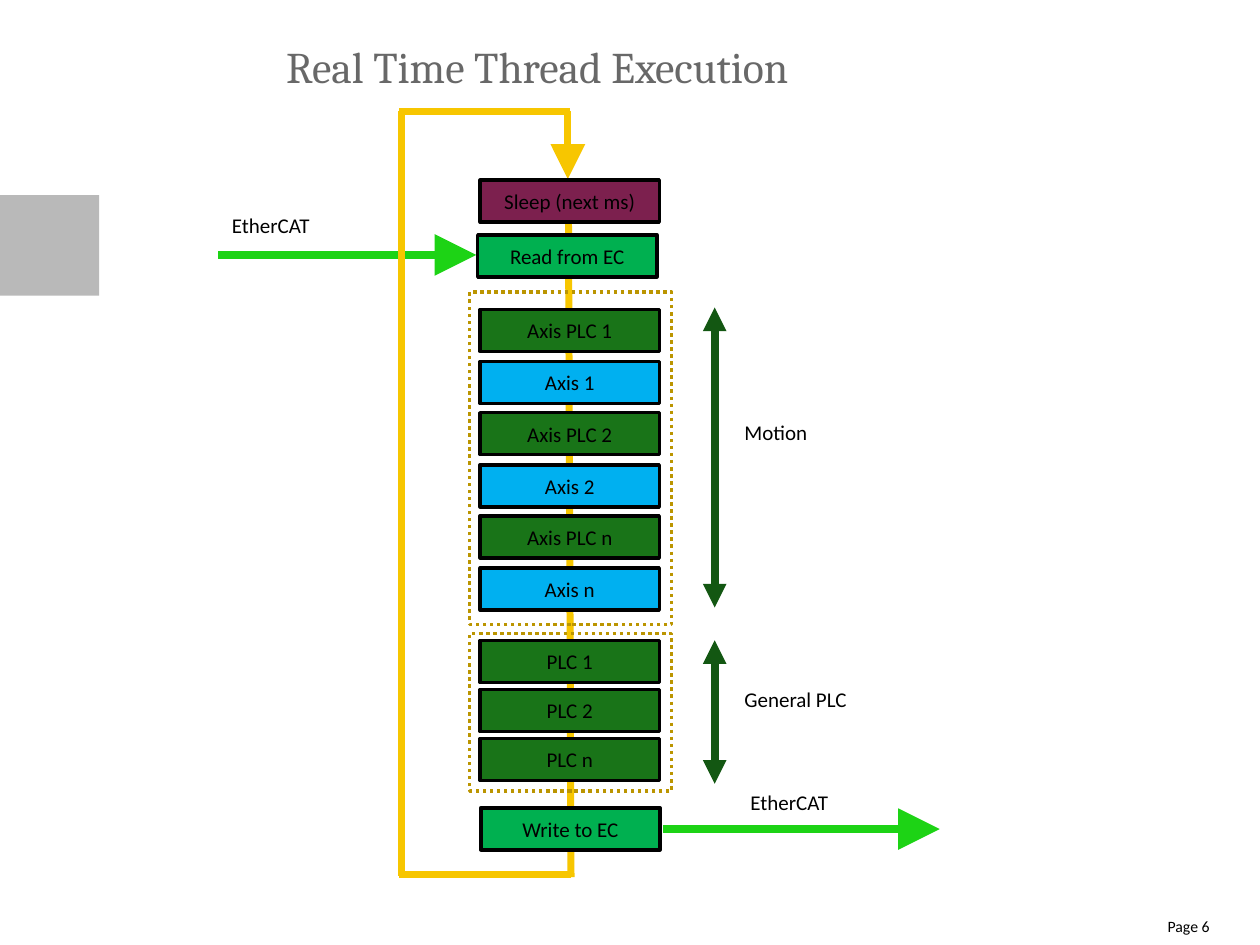
import pptx
import pptx.util
import pptx.dml.color
import pptx.enum.dml
import pptx.enum.shapes
import pptx.enum.text
import lxml.etree
from pptx.oxml.ns import qn

Pt = pptx.util.Pt
ANCHOR = pptx.enum.text.MSO_ANCHOR
ALIGN = pptx.enum.text.PP_ALIGN
RECTANGLE = pptx.enum.shapes.MSO_SHAPE.RECTANGLE
STRAIGHT = pptx.enum.shapes.MSO_CONNECTOR.STRAIGHT


def color(hex_value):
    return pptx.dml.color.RGBColor.from_string(hex_value)


def write(shape, text, size=12, font="Calibri", hex_value="000000",
          align=ALIGN.LEFT, anchor=ANCHOR.TOP, inset=(0, 0), wrap=True):
    frame = shape.text_frame
    frame.text = text
    frame.word_wrap = wrap
    frame.vertical_anchor = anchor
    frame.margin_left = frame.margin_right = Pt(inset[0])
    frame.margin_top = frame.margin_bottom = Pt(inset[1])
    paragraph = frame.paragraphs[0]
    paragraph.alignment = align
    run = paragraph.runs[0]
    run.font.size = Pt(size)
    run.font.name = font
    run.font.color.rgb = color(hex_value)


presentation = pptx.Presentation()
presentation.slide_width = Pt(720)
presentation.slide_height = Pt(540)
slide = presentation.slides.add_slide(presentation.slide_layouts[6])
shapes = slide.shapes

# Side block
block = shapes.add_shape(RECTANGLE, Pt(0), Pt(111.5), Pt(56.7), Pt(57.5))
block.shadow.inherit = False
block.fill.solid()
block.fill.fore_color.rgb = color("B9B9B9")
block.line.fill.background()

# Title and page number
title = shapes.add_textbox(Pt(163.5), Pt(23), Pt(528.5), Pt(40.5))
write(title, "Real Time Thread Execution", 25, "Cambria", "686868")
page_number = shapes.add_textbox(Pt(646), Pt(524), Pt(45.2), Pt(16))
write(page_number, "Page 6", 9, align=ALIGN.RIGHT)

# Lines: start, end, color, width, head size, arrowhead ends
BUS, LOOP, SPAN = "1DD315", "F7C600", "135712"
lines = [
    # EtherCAT in and out
    ((378.8, 473.8), (537, 473.8), BUS, 4.75, "lg", ["tailEnd"]),
    ((124.7, 145.7), (272.2, 145.7), BUS, 4.75, "lg", ["tailEnd"]),
    # Execution loop
    ((324.8, 112.3), (326.3, 501.2), LOOP, 4, "lg", []),
    ((324.5, 63.4), (324.5, 102.3), LOOP, 4, "lg", ["tailEnd"]),
    ((326.3, 499.7), (228.2, 499.7), LOOP, 4, "lg", []),
    ((229.5, 500.5), (229.5, 63.4), LOOP, 4, "lg", []),
    ((326, 63.8), (228.2, 63.8), LOOP, 4, "lg", []),
    # Phase spans
    ((408.4, 175.7), (408.4, 347.2), SPAN, 4.5, "med", ["headEnd", "tailEnd"]),
    ((408.4, 365.9), (408.4, 447.9), SPAN, 4.5, "med", ["headEnd", "tailEnd"]),
]
for start, end, hex_value, width, head_size, ends in lines:
    connector = shapes.add_connector(
        STRAIGHT, Pt(start[0]), Pt(start[1]), Pt(end[0]), Pt(end[1]))
    connector.line.color.rgb = color(hex_value)
    connector.line.width = Pt(width)
    line_element = connector.line._get_or_add_ln()
    for end_name in ends:
        lxml.etree.SubElement(line_element, qn("a:" + end_name),
                              type="triangle", w=head_size, len=head_size)
    lxml.etree.SubElement(connector._element.spPr, qn("a:effectLst"))

# Steps of the thread: text, left, top, fill
PLC, AXIS, TRANSFER = "197418", "00B0F0", "00B050"
steps = [
    ("Sleep (next ms)", 274.4, 102.9, "7C204E"),
    ("Read from EC", 273, 134.2, TRANSFER),
    ("Write to EC", 274.8, 461.6, TRANSFER),
]
for index, name in enumerate(["1", "2", "n"]):
    steps.append((f"Axis PLC {name}", 274.4, 176.8 + 59 * index, PLC))
    steps.append((f"Axis {name}", 274.4, 206.6 + 59 * index, AXIS))
    steps.append((f"PLC {name}", 274.4, 366 + 28 * index, PLC))
for text, left, top, fill in steps:
    step = shapes.add_shape(RECTANGLE, Pt(left), Pt(top), Pt(102.4), Pt(24))
    step.shadow.inherit = False
    step.fill.solid()
    step.fill.fore_color.rgb = color(fill)
    step.line.color.rgb = color("000000")
    step.line.width = Pt(2)
    write(step, text, align=ALIGN.CENTER, anchor=ANCHOR.MIDDLE, inset=(9.4, 5))

# Dotted frames around the motion and PLC phases
for top, height in [(167, 190), (362, 90)]:
    frame = shapes.add_shape(RECTANGLE, Pt(268.4), Pt(top), Pt(115.4), Pt(height))
    frame.shadow.inherit = False
    frame.fill.background()
    frame.line.color.rgb = color("BB9500")
    frame.line.width = Pt(2)
    frame.line.dash_style = pptx.enum.dml.MSO_LINE.ROUND_DOT

# Labels: text, left, top, width, height, inset
labels = [
    ("EtherCAT", 123.1, 116.6, 80.6, 27.4, (9.4, 5)),
    ("EtherCAT", 419.4, 446.4, 80.6, 27.4, (9.4, 5)),
    ("Motion", 418.3, 236.3, 51, 21.8, (7.2, 3.6)),
    ("General PLC", 418.3, 388.9, 73.4, 21.8, (7.2, 3.6)),
]
for text, left, top, width, height, inset in labels:
    label = shapes.add_textbox(Pt(left), Pt(top), Pt(width), Pt(height))
    write(label, text, inset=inset, wrap=False)

presentation.save("out.pptx")
